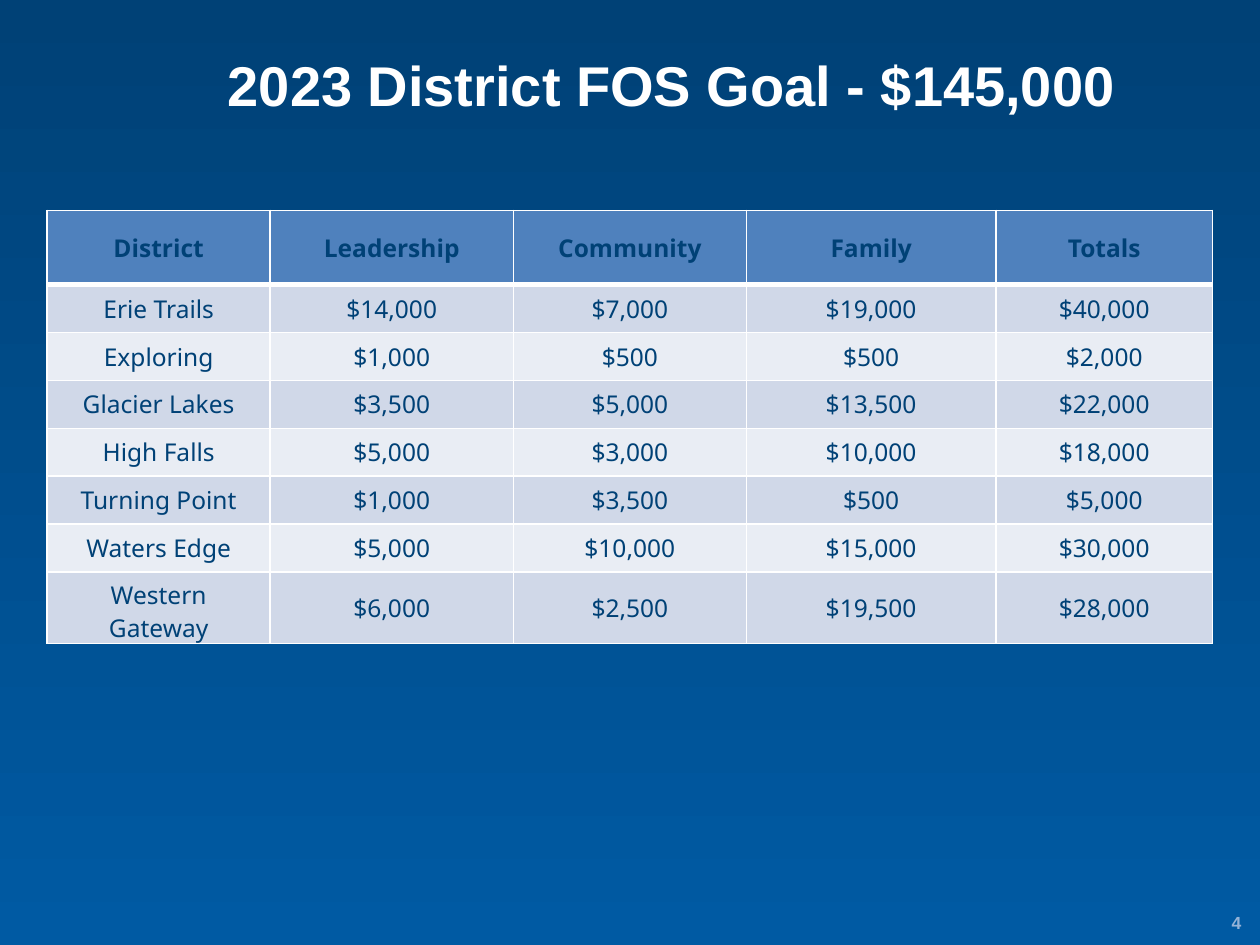
import pptx
import pptx.dml.color
import pptx.enum.text
import pptx.oxml.ns
import pptx.util
from lxml import etree

RGBColor = pptx.dml.color.RGBColor
Inches = pptx.util.Inches
ALIGN = pptx.enum.text.PP_ALIGN
MIDDLE = pptx.enum.text.MSO_ANCHOR.MIDDLE

# Content
TITLE = "2023 District FOS Goal - $145,000"
PAGE_NUMBER = "4"
GOALS = [
    ("District", "Leadership", "Community", "Family", "Totals"),
    ("Erie Trails", "$14,000", "$7,000", "$19,000", "$40,000"),
    ("Exploring", "$1,000", "$500", "$500", "$2,000"),
    ("Glacier Lakes", "$3,500", "$5,000", "$13,500", "$22,000"),
    ("High Falls", "$5,000", "$3,000", "$10,000", "$18,000"),
    ("Turning Point", "$1,000", "$3,500", "$500", "$5,000"),
    ("Waters Edge", "$5,000", "$10,000", "$15,000", "$30,000"),
    ("Western Gateway", "$6,000", "$2,500", "$19,500", "$28,000"),
]

# Format
WIDTH, HEIGHT = 10, 7.5
COLUMN_WIDTHS = (1.77, 1.93, 1.85, 1.98, 1.72)
HEADER_HEIGHT, ROW_HEIGHT = 0.59, 0.38
TABLE_TOP = 1.67
TITLE_LINE = 0.51
NAVY = RGBColor(0x00, 0x41, 0x76)
BLUE = RGBColor(0x00, 0x5A, 0xA3)
WHITE = RGBColor(0xFF, 0xFF, 0xFF)
PALE_BLUE = RGBColor(0x95, 0xB3, 0xD7)
HEADER_FILL = RGBColor(0x4F, 0x81, 0xBD)
BAND_FILLS = (RGBColor(0xE9, 0xED, 0xF4), RGBColor(0xD0, 0xD8, 0xE8))


def write(frame, text, *, size, color, font="Arial", bold=False, align=ALIGN.LEFT):
    frame.word_wrap = True
    frame.vertical_anchor = MIDDLE
    paragraph = frame.paragraphs[0]
    paragraph.alignment = align
    run = paragraph.add_run()
    run.text = text
    run.font.name = font
    run.font.size = pptx.util.Pt(size)
    run.font.bold = bold
    run.font.color.rgb = color


def add_borders(cell, widths):
    properties = cell._tc.get_or_add_tcPr()
    for side, width in widths.items():
        line = etree.SubElement(properties, pptx.oxml.ns.qn(f"a:ln{side}"),
                                w=str(pptx.util.Pt(width)))
        fill = etree.SubElement(line, pptx.oxml.ns.qn("a:solidFill"))
        etree.SubElement(fill, pptx.oxml.ns.qn("a:srgbClr"), val=str(WHITE))


presentation = pptx.Presentation()
presentation.slide_width = Inches(WIDTH)
presentation.slide_height = Inches(HEIGHT)
slide = presentation.slides.add_slide(presentation.slide_layouts[6])

# Background, darker at the top
background = slide.background.fill
background.gradient()
background.gradient_angle = 270
for stop, color, position in zip(background.gradient_stops, (NAVY, BLUE), (0, 1)):
    stop.color.rgb = color
    stop.position = position

# Title, raised by one free line below it
title = slide.shapes.add_textbox(Inches(1.71), Inches(0.3), Inches(7.7), Inches(1.25))
title.text_frame.margin_bottom = Inches(0.05 + TITLE_LINE)
write(title.text_frame, TITLE, size=32, color=WHITE, bold=True)

# Goals table, centred across the slide
table_width = sum(COLUMN_WIDTHS)
row_heights = [HEADER_HEIGHT] + [ROW_HEIGHT] * (len(GOALS) - 1)
table = slide.shapes.add_table(
    len(GOALS), len(COLUMN_WIDTHS), Inches((WIDTH - table_width) / 2),
    Inches(TABLE_TOP), Inches(table_width), Inches(sum(row_heights))).table
for column, width in zip(table.columns, COLUMN_WIDTHS):
    column.width = Inches(width)
for row_index, (row, height, values) in enumerate(zip(table.rows, row_heights, GOALS)):
    row.height = Inches(height)
    header = row_index == 0
    borders = {"L": 1, "R": 1, "T": 3 if row_index == 1 else 1, "B": 3 if header else 1}
    for cell, value in zip(row.cells, values):
        add_borders(cell, borders)
        cell.fill.solid()
        cell.fill.fore_color.rgb = HEADER_FILL if header else BAND_FILLS[row_index % 2]
        cell.vertical_anchor = MIDDLE
        write(cell.text_frame, value, size=14, color=NAVY, font="Noto Sans",
              bold=header, align=ALIGN.CENTER)

# Page number
number = slide.shapes.add_textbox(Inches(9.5), Inches(7.12), Inches(0.45), Inches(0.4))
write(number.text_frame, PAGE_NUMBER, size=10, color=PALE_BLUE, bold=True, align=ALIGN.RIGHT)

presentation.save("out.pptx")
